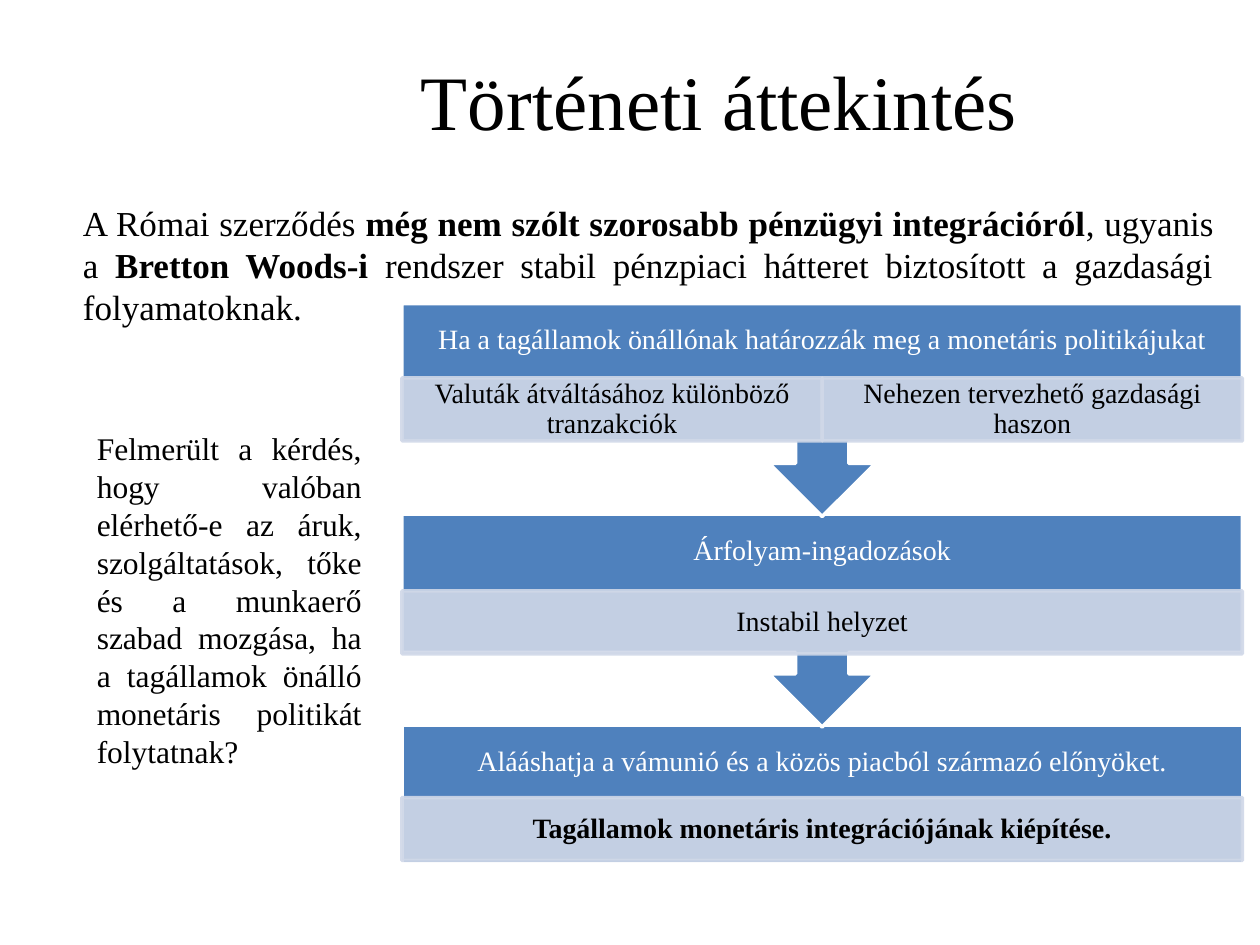
from dataclasses import dataclass

from lxml import etree
from pptx import Presentation
from pptx.dml.color import RGBColor
from pptx.enum import shapes, text
from pptx.oxml import ns
from pptx.util import Inches, Pt


@dataclass(frozen=True)
class Theme:
    font: str = "Times New Roman"
    ink: str = "000000"
    white: str = "FFFFFF"
    blue: str = "4F81BD"
    pale: str = "D0D8E8"
    title: int = 44
    intro: int = 20
    question: int = 18
    step: int = 16
    border: int = 2
    pale_opacity: int = 90


THEME = Theme()
CENTER, JUSTIFY = text.PP_ALIGN.CENTER, text.PP_ALIGN.JUSTIFY
FLOW_LEFT, FLOW_WIDTH = 3.19, 6.67
HEADING_HEIGHT, DETAIL_HEIGHT = 0.59, 0.5
CALLOUT, BOX = shapes.MSO_SHAPE.UP_ARROW_CALLOUT, shapes.MSO_SHAPE.RECTANGLE

INTRO = [
    ("A Római szerződés ", False),
    ("még nem szólt szorosabb pénzügyi integrációról", True),
    (", ugyanis a ", False),
    ("Bretton Woods-i ", True),
    ("rendszer stabil pénzpiaci hátteret biztosított a gazdasági folyamatoknak.", False),
]
QUESTION = [(
    "Felmerült a kérdés, hogy valóban elérhető-e az áruk, szolgáltatások, tőke "
    "és a munkaerő szabad mozgása, ha a tagállamok önálló monetáris politikát "
    "folytatnak?", False)]
STEPS = [
    (2.41, 3.0, CALLOUT, 1.69,
     "Ha a tagállamok önállónak határozzák meg a monetáris politikájukat",
     [("Valuták átváltásához különböző tranzakciók", False),
      ("Nehezen tervezhető gazdasági haszon", False)]),
    (4.08, 4.69, CALLOUT, 1.69, "Árfolyam-ingadozások",
     [("Instabil helyzet", False)]),
    (5.76, 6.33, BOX, 1.1,
     "Alááshatja a vámunió és a közös piacból származó előnyöket.",
     [("Tagállamok monetáris integrációjának kiépítése.", True)]),
]


def set_all(target, values):
    for name, value in values.items():
        setattr(target, name, value)


def write(frame, runs, size, color, align, **frame_format):
    set_all(frame, {"word_wrap": True, **frame_format})
    paragraph = frame.paragraphs[0]
    paragraph.alignment = align
    for words, bold in runs:
        run = paragraph.add_run()
        run.text = words
        set_all(run.font, {"name": THEME.font, "size": Pt(size), "bold": bold})
        run.font.color.rgb = RGBColor.from_string(color)


def write_step(frame, run, color, vertical_margin):
    write(frame, [run], THEME.step, color, CENTER,
          vertical_anchor=text.MSO_ANCHOR.MIDDLE,
          margin_left=Inches(0.12), margin_right=Inches(0.12),
          margin_top=Inches(vertical_margin), margin_bottom=Inches(vertical_margin))
    frame.paragraphs[0].line_spacing = 0.9


def add_body_text(slide, place, runs, size):
    body = slide.shapes.add_textbox(*map(Inches, place))
    write(body.text_frame, runs, size, THEME.ink, JUSTIFY,
          auto_size=text.MSO_AUTO_SIZE.SHAPE_TO_FIT_TEXT)


def add_panel(flow, kind, place, fill, border, opacity=100):
    panel = flow.shapes.add_shape(kind, *map(Inches, place))
    panel.shadow.inherit = False
    panel.line.width = Pt(THEME.border)
    for paint, color in ((panel.fill, fill), (panel.line.fill, border)):
        paint.solid()
        paint.fore_color.rgb = RGBColor.from_string(color)
    if opacity < 100:
        for color in panel.element.spPr.iter(ns.qn("a:srgbClr")):
            etree.SubElement(color, ns.qn("a:alpha")).set("val", str(opacity * 1000))
    return panel


def add_step(flow, top, detail_top, kind, height, heading, details):
    panel = add_panel(flow, kind, (FLOW_LEFT, top, FLOW_WIDTH, height),
                      THEME.blue, THEME.white)
    if kind == CALLOUT:
        panel.rotation = 180
    label = flow.shapes.add_textbox(
        *map(Inches, (FLOW_LEFT, top, FLOW_WIDTH, HEADING_HEIGHT)))
    write_step(label.text_frame, (heading, False), THEME.white, 0.12)
    width = FLOW_WIDTH / len(details)
    for column, detail in enumerate(details):
        place = (FLOW_LEFT + column * width, detail_top, width, DETAIL_HEIGHT)
        cell = add_panel(flow, BOX, place, THEME.pale, THEME.pale, THEME.pale_opacity)
        write_step(cell.text_frame, detail, THEME.ink, 0.02)


def add_title(slide, words):
    title = slide.shapes.title
    set_all(title, {"left": Inches(1.46), "top": Inches(-0.01),
                    "width": Inches(8.5), "height": Inches(1.61)})
    write(title.text_frame, [(words, False)], THEME.title, THEME.ink, CENTER,
          vertical_anchor=text.MSO_ANCHOR.MIDDLE)


def main():
    deck = Presentation()
    set_all(deck, {"slide_width": Inches(10), "slide_height": Inches(7.5)})
    slide = deck.slides.add_slide(deck.slide_layouts.get_by_name("Title Only"))
    add_title(slide, "Történeti áttekintés")
    add_body_text(slide, (0.56, 1.55, 9.17, 1.11), INTRO, THEME.intro)
    add_body_text(slide, (0.67, 3.36, 2.3, 3.1), QUESTION, THEME.question)
    flow = slide.shapes.add_group_shape()
    for step in reversed(STEPS):
        add_step(flow, *step)
    deck.save("out.pptx")


if __name__ == "__main__":
    main()
